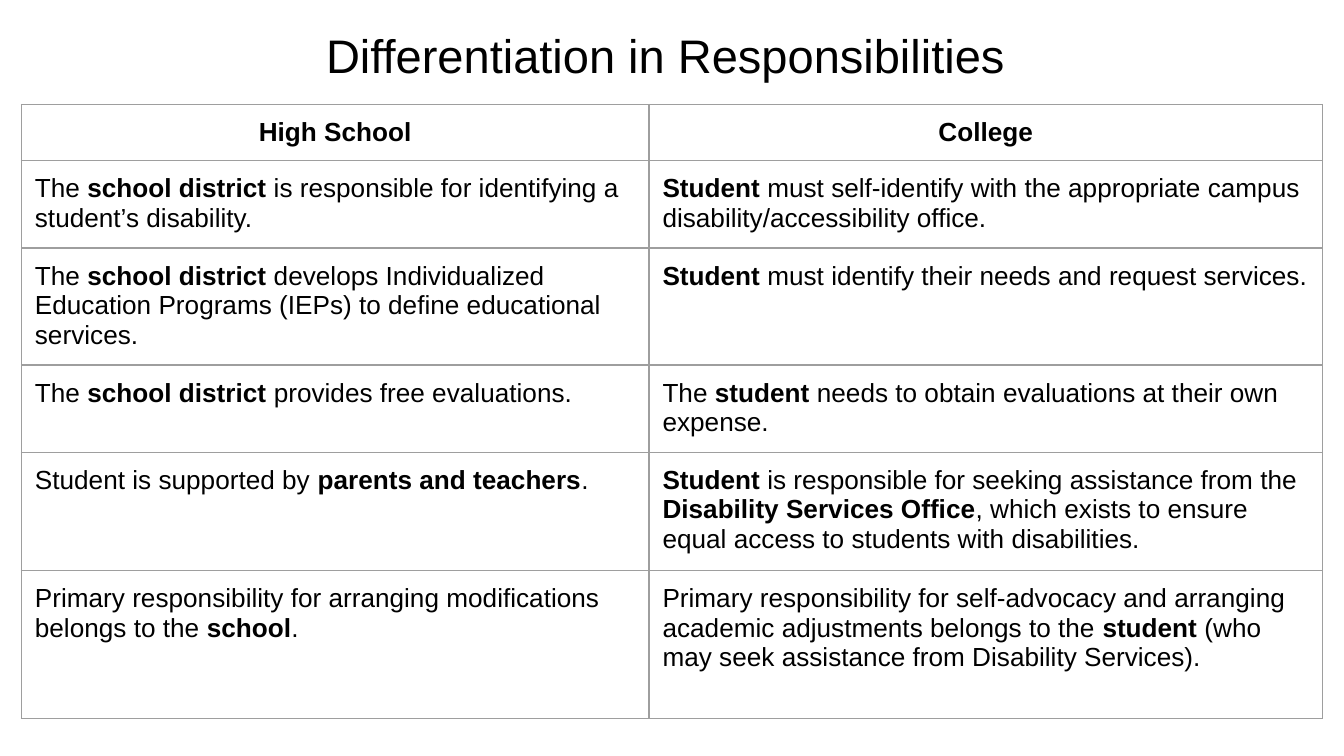
from lxml import etree
from pptx import Presentation, util as u
from pptx.dml.color import RGBColor
from pptx.enum import text
from pptx.oxml import ns

WIDE = u.Inches(10)
HIGH = WIDE * 9 // 16
BLACK = RGBColor(0x00, 0x00, 0x00)
WHITE = RGBColor(0xFF, 0xFF, 0xFF)
GREY = RGBColor(0x9E, 0x9E, 0x9E)
FONT = "Arial"
PAD = u.Inches(0.1)
COLS = (4.67, 5.01)
ROWS = (0.42, 0.65, 0.87, 0.65, 0.88, 1.1)
DUTIES = (
    ("*High School*", "*College*"),
    ("The* school district *is responsible for identifying a student’s disability.",
     "*Student* must self-identify with the appropriate campus disability/accessibility office."),
    ("The *school district* develops Individualized Education Programs (IEPs) to define educational services.",
     "*Student* must identify their needs and request services."),
    ("The *school district *provides free evaluations.",
     "The *student *needs to obtain evaluations at their own expense."),
    ("Student is supported by *parents and teachers*.",
     "*Student* is responsible for seeking assistance from the *Disability Services Office*, "
     "which exists to ensure equal access to students with disabilities."),
    ("Primary responsibility for arranging modifications belongs to the *school*.",
     "Primary responsibility for self-advocacy and arranging academic adjustments belongs to the "
     "*student *(who may seek assistance from Disability Services)."),
)


def write(para, words, size, align):
    """Add words run by run, with starred parts in bold."""
    para.alignment = align
    for i, part in enumerate(words.split("*")):
        if part:
            run = para.add_run()
            run.text = part
            font = run.font
            font.name, font.size, font.bold = FONT, u.Pt(size), i % 2 == 1
            font.color.rgb = BLACK


def pad(box):
    """Give a cell or text frame equal margins."""
    box.margin_left = box.margin_right = box.margin_top = box.margin_bottom = PAD


def edge(cell):
    """Draw a thin grey line on all four sides of a cell."""
    props = cell._tc.get_or_add_tcPr()
    for side in ("lnL", "lnR", "lnT", "lnB"):
        line = etree.SubElement(props, ns.qn("a:" + side), w=str(u.Pt(0.75)))
        fill = etree.SubElement(line, ns.qn("a:solidFill"))
        etree.SubElement(fill, ns.qn("a:srgbClr"), val=str(GREY))


def add_head(slide, box, words):
    """Place and format the slide title in its box."""
    head = slide.shapes.title
    head.left, head.top, head.width, head.height = box
    frame = head.text_frame
    frame.word_wrap = True
    frame.auto_size = text.MSO_AUTO_SIZE.NONE
    frame.vertical_anchor = text.MSO_ANCHOR.MIDDLE
    pad(frame)
    write(frame.paragraphs[0], words, 25.2, text.PP_ALIGN.CENTER)


def add_grid(slide, box, data):
    """Fill the box with a table, sharing its size by column and row weights."""
    width, height = box[2:]
    table = slide.shapes.add_table(len(ROWS), len(COLS), *box).table
    table.first_row = table.horz_banding = False
    for col, part in zip(table.columns, COLS):
        col.width = int(width * part / sum(COLS))
    for row, part in zip(table.rows, ROWS):
        row.height = int(height * part / sum(ROWS))
    for r, line in enumerate(data):
        for c, words in enumerate(line):
            cell = table.cell(r, c)
            pad(cell)
            edge(cell)
            cell.fill.solid()
            cell.fill.fore_color.rgb = WHITE
            align = text.PP_ALIGN.LEFT if r else text.PP_ALIGN.CENTER
            write(cell.text_frame.paragraphs[0], words, 14, align)


def share(left, top, width, height):
    """Turn percentages of the slide into a box."""
    return tuple(int(full * part / 100) for full, part in
                 ((WIDE, left), (HIGH, top), (WIDE, width), (HIGH, height)))


def main():
    """Build the slide and save it."""
    deck = Presentation()
    deck.slide_width, deck.slide_height = WIDE, HIGH
    slide = deck.slides.add_slide(deck.slide_layouts[5])
    add_head(slide, share(3.4, 1.7, 93.2, 11.2), "Differentiation in Responsibilities ")
    add_grid(slide, share(1.6, 13.8, 96.8, 81.25), DUTIES)
    deck.save("out.pptx")


if __name__ == "__main__":
    main()
